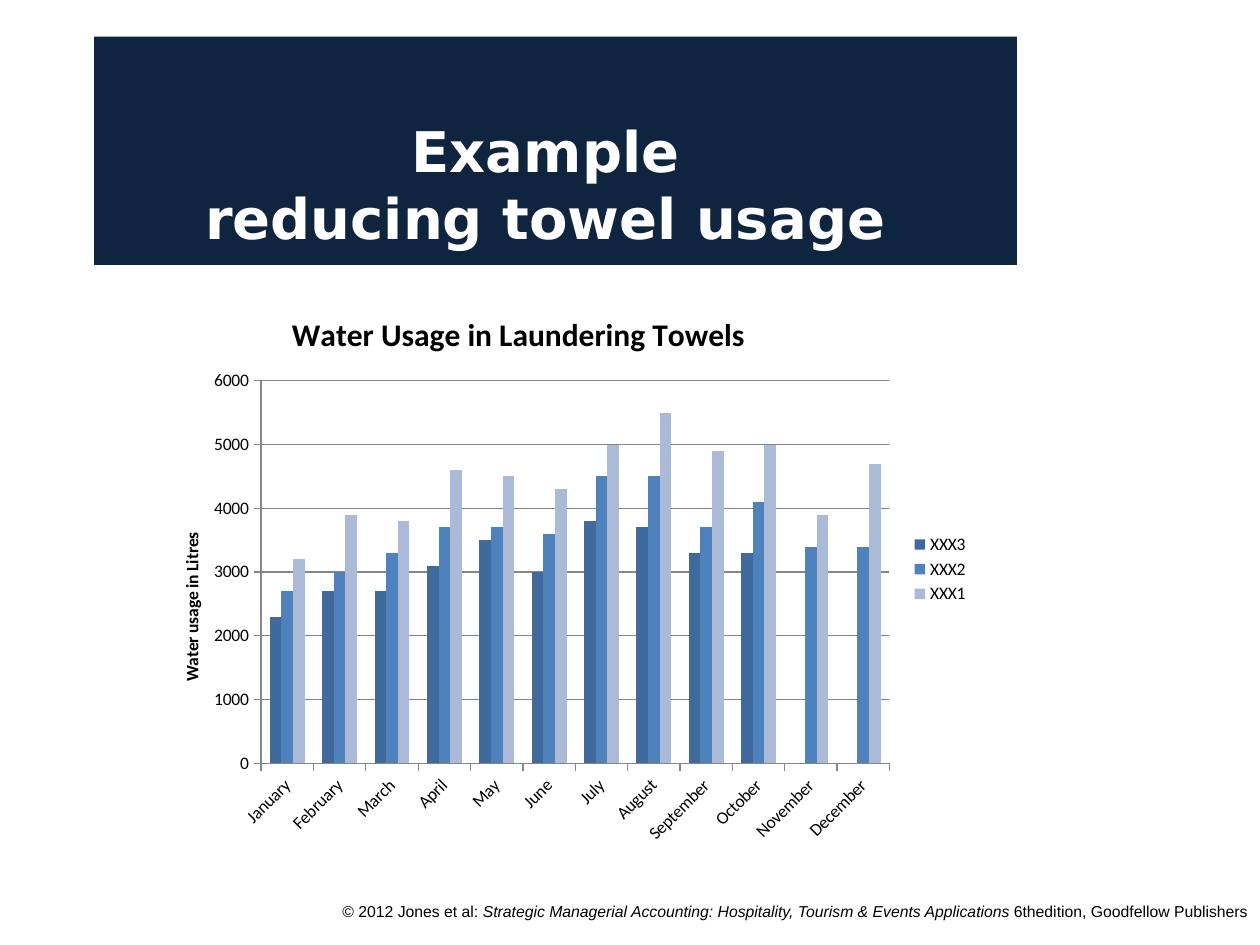
from dataclasses import dataclass

import pptx
import pptx.chart.data
import pptx.dml.color
import pptx.enum.chart
import pptx.enum.shapes
import pptx.enum.text
import pptx.oxml
import pptx.util
from pptx.oxml.ns import nsdecls
from pptx.util import Cm, Pt

NAVY, WHITE, BLACK, GREY = "0F243E", "FFFFFF", "000000", "868686"
MONTHS = ["January", "February", "March", "April", "May", "June", "July",
          "August", "September", "October", "November", "December"]


@dataclass
class Box:
    left: float
    top: float
    width: float
    height: float

    def lengths(self) -> list:
        return [Cm(value) for value in (self.left, self.top, self.width, self.height)]


@dataclass
class WaterSeries:
    name: str
    color: str
    litres: list


WATER_USAGE = [
    WaterSeries("XXX3", "416A9C", [2300, 2700, 2700, 3100, 3500, 3000,
                                   3800, 3700, 3300, 3300, None, None]),
    WaterSeries("XXX2", "4F81BD", [2700, 3000, 3300, 3700, 3700, 3600,
                                   4500, 4500, 3700, 4100, 3400, 3400]),
    WaterSeries("XXX1", "AABAD7", [3200, 3900, 3800, 4600, 4500, 4300,
                                   5000, 5500, 4900, 5000, 3900, 4700]),
]


def rgb(color: str) -> pptx.dml.color.RGBColor:
    return pptx.dml.color.RGBColor.from_string(color)


def set_format(target, values: dict) -> None:
    for name, value in values.items():
        setattr(target, name, value)


def set_font(font, color: str, **values) -> None:
    set_format(font, values)
    font.color.rgb = rgb(color)


def place(element, **fractions: float) -> None:
    """Fix the position of a chart part as fractions of the chart area."""
    tags = [("xMode", "edge"), ("yMode", "edge"), *fractions.items()]
    if "w" in fractions:
        tags.insert(0, ("layoutTarget", "inner"))
    content = "".join(f'<c:{tag} val="{value}"/>' for tag, value in tags)
    layout = pptx.oxml.parse_xml(
        f'<c:layout {nsdecls("c")}><c:manualLayout>{content}</c:manualLayout></c:layout>')
    for old in element.findall(layout.tag):
        element.remove(old)
    # The layout follows the title text, and comes first in the plot area
    has_text = element.find(pptx.oxml.ns.qn("c:tx")) is not None
    element.insert(1 if has_text else 0, layout)


def add_banner(slide, box: Box) -> None:
    shape = slide.shapes.add_shape(pptx.enum.shapes.MSO_SHAPE.RECTANGLE, *box.lengths())
    shape.shadow.inherit = False
    shape.fill.solid()
    shape.fill.fore_color.rgb = rgb(NAVY)
    shape.line.fill.background()
    set_format(shape.text_frame, {
        "word_wrap": True,
        "vertical_anchor": pptx.enum.text.MSO_ANCHOR.BOTTOM,
        "margin_right": Cm(0.65),
        "margin_bottom": Cm(0.28),
    })
    paragraph = shape.text_frame.paragraphs[0]
    paragraph.text = "Example\vreducing towel usage"
    paragraph.alignment = pptx.enum.text.PP_ALIGN.CENTER
    for run in paragraph.runs:
        set_font(run.font, WHITE, name="DejaVu Sans", size=Pt(32), bold=True)


def add_footer(slide, box: Box) -> None:
    text_frame = slide.shapes.add_textbox(*box.lengths()).text_frame
    text_frame.word_wrap = True
    paragraph = text_frame.paragraphs[0]
    paragraph.alignment = pptx.enum.text.PP_ALIGN.RIGHT
    for text, italic in [
        ("© 2012 Jones et al: ", False),
        ("Strategic Managerial Accounting: Hospitality, Tourism & Events Applications ", True),
        ("6thedition, Goodfellow Publishers", False),
    ]:
        run = paragraph.add_run()
        run.text = text
        set_font(run.font, BLACK, name="Arial", size=Pt(9), italic=italic)


def add_title(owner, title, text: str, size: int, x: float, y: float) -> None:
    owner.has_title = True
    title = title()
    title.text_frame.text = text
    font = title.text_frame.paragraphs[0].runs[0].font
    set_font(font, BLACK, name="Calibri", size=Pt(size), bold=True)
    place(title._element, x=x, y=y)


def add_water_chart(slide, box: Box) -> None:
    data = pptx.chart.data.CategoryChartData()
    data.categories = MONTHS
    for series in WATER_USAGE:
        data.add_series(series.name, series.litres)
    chart = slide.shapes.add_chart(
        pptx.enum.chart.XL_CHART_TYPE.COLUMN_CLUSTERED, *box.lengths(), data).chart
    set_font(chart.font, BLACK, name="Calibri", size=Pt(10))

    # Columns
    plot = chart.plots[0]
    set_format(plot, {"gap_width": 150, "overlap": 0, "vary_by_categories": False})
    for series, water in zip(plot.series, WATER_USAGE):
        series.format.fill.solid()
        series.format.fill.fore_color.rgb = rgb(water.color)

    # Axes
    value_axis, category_axis = chart.value_axis, chart.category_axis
    set_format(value_axis, {"minimum_scale": 0, "maximum_scale": 6000,
                            "major_unit": 1000, "has_major_gridlines": True})
    for axis in (value_axis, category_axis):
        axis.major_tick_mark = pptx.enum.chart.XL_TICK_MARK.OUTSIDE
    for line in (value_axis.format.line, category_axis.format.line,
                 value_axis.major_gridlines.format.line):
        line.color.rgb = rgb(GREY)
        line.width = Pt(0.75)
    category_axis.tick_labels.font.size = Pt(10)
    body = category_axis._element.find(
        "/".join(pptx.oxml.ns.qn(tag) for tag in ("c:txPr", "a:bodyPr")))
    body.set("rot", str(-45 * 60000))
    body.set("vert", "horz")

    # Titles, legend and plot area
    add_title(chart, lambda: chart.chart_title,
              "Water Usage in Laundering Towels", 18, 0.17, 0.04)
    add_title(value_axis, lambda: value_axis.axis_title,
              "Water usage in Litres", 10, 0.04, 0.43)
    value_axis.axis_title._element.find(
        ".//" + pptx.oxml.ns.qn("a:bodyPr")).set("rot", str(-90 * 60000))
    chart.has_legend = True
    set_format(chart.legend, {
        "position": pptx.enum.chart.XL_LEGEND_POSITION.RIGHT,
        "include_in_layout": False,
    })
    place(plot._element.getparent(), x=0.14, y=0.17, w=0.75, h=0.67)


def main() -> None:
    presentation = pptx.Presentation()
    presentation.slide_width, presentation.slide_height = Cm(25.4), Cm(19.05)
    slide = presentation.slides.add_slide(presentation.slide_layouts[6])
    add_footer(slide, Box(5.66, 18.06, 19.74, 0.99))
    add_banner(slide, Box(1.9, 0.74, 18.6, 4.6))
    add_water_chart(slide, Box(2.9, 5.72, 16.89, 11.51))
    presentation.save("out.pptx")


if __name__ == "__main__":
    main()
